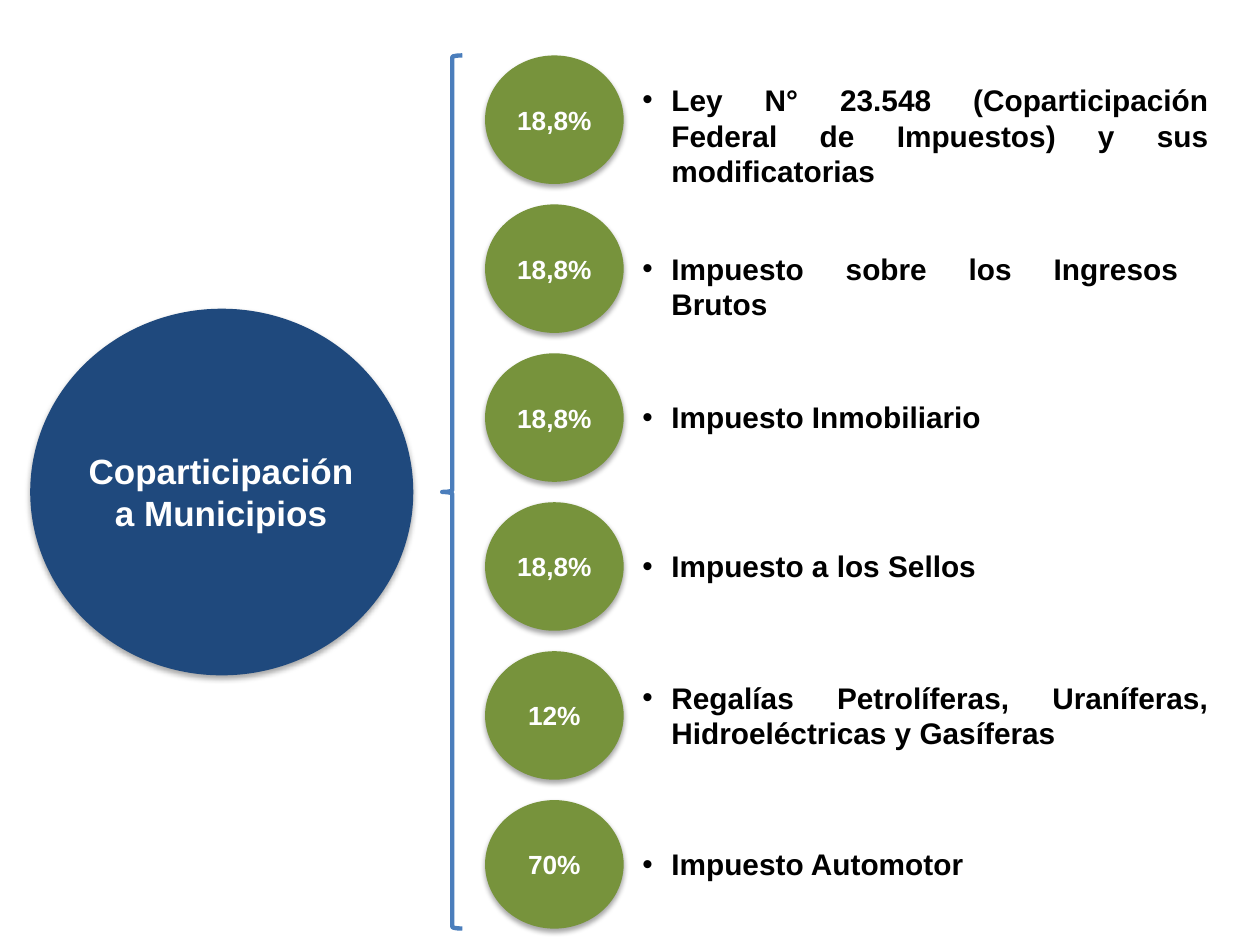
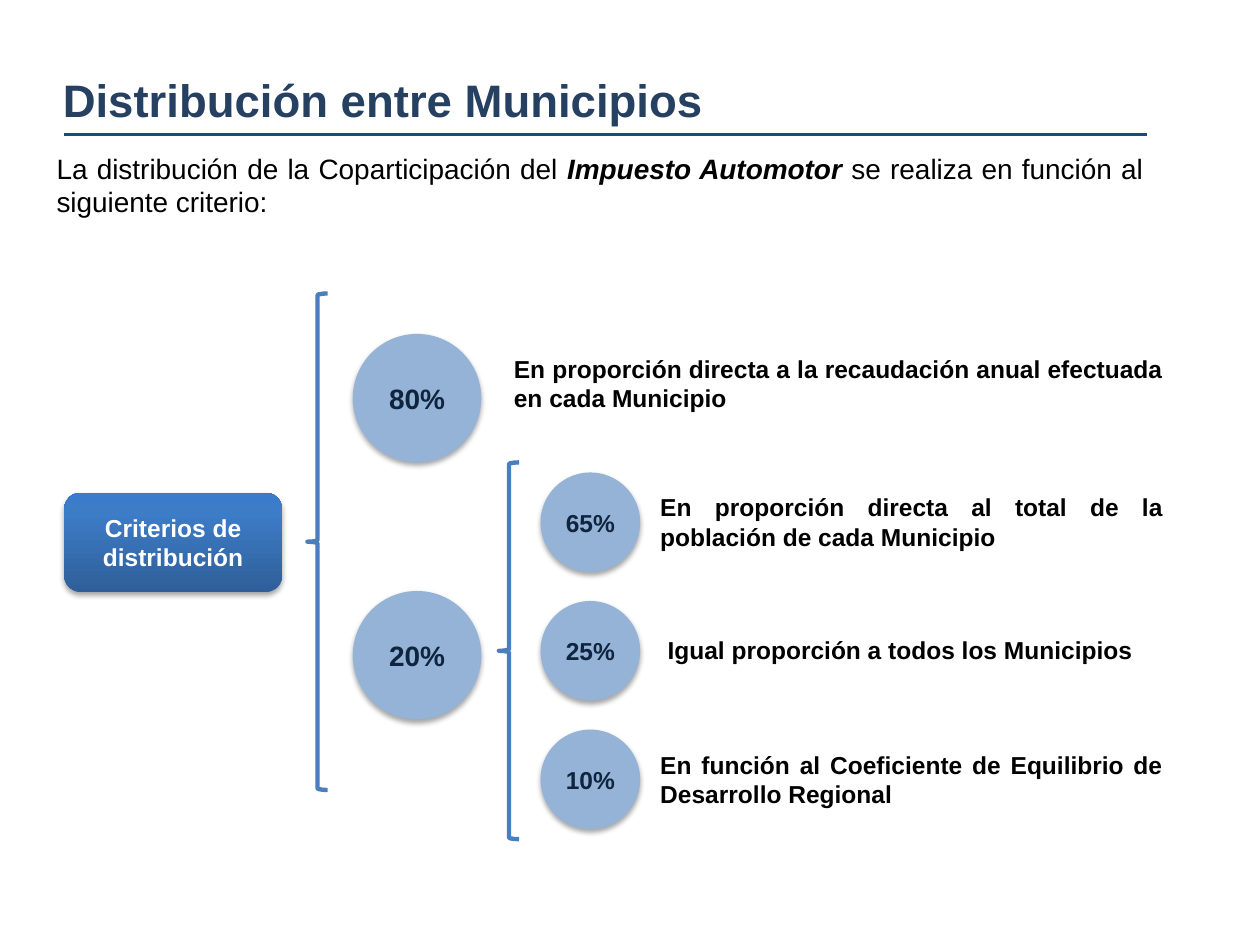
from lxml import etree
from pptx import Presentation
from pptx.dml.color import RGBColor
from pptx.enum import shapes, text
from pptx.oxml import ns
from pptx.util import Inches, Pt

FONT = "Arial"
BLACK = RGBColor(0x00, 0x00, 0x00)
WHITE = RGBColor(0xFF, 0xFF, 0xFF)
NAVY = RGBColor(0x1F, 0x49, 0x7D)
TITLE_BLUE = RGBColor(0x25, 0x40, 0x61)
INK = RGBColor(0x0F, 0x24, 0x3E)
BRACE_BLUE = RGBColor(0x4B, 0x7E, 0xBC)
GREEN = RGBColor(0x77, 0x93, 0x3C)
SKY = RGBColor(0x95, 0xB3, 0xD7)
BUTTON_STOPS = [(0, "2F5F99"), (80, "3D7CC7"), (100, "3A7CCB")]

NARROW = (0.04, 0.05, 0.04, 0.05)
NORMAL = (0.1, 0.05, 0.1, 0.05)
TIGHT_LEFT = (0.04, 0.05, 0.1, 0.05)

SHARES_TITLE = "Coparticipación a Municipios"
# share, tax, label width, label height
SHARES = [
    ("18,8%", "Ley N° 23.548 (Coparticipación Federal de Impuestos) y sus modificatorias", 4.69, 0.7),
    ("18,8%", "Impuesto sobre los Ingresos Brutos", 4.45, 0.39),
    ("18,8%", "Impuesto Inmobiliario", 4.45, 0.39),
    ("18,8%", "Impuesto a los Sellos", 4.45, 0.39),
    ("12%", "Regalías Petrolíferas, Uraníferas, Hidroeléctricas y Gasíferas", 4.69, 0.67),
    ("70%", "Impuesto Automotor", 2.82, 0.39),
]

TITLE = "Distribución entre Municipios"
INTRO = [
    ("La distribución de la Coparticipación del ", False),
    ("Impuesto Automotor ", True),
    ("se realiza en función al siguiente criterio:", False),
]
CRITERIA_TITLE = "Criterios de distribución"
DIRECT_SHARE = "En proporción directa a la recaudación anual efectuada en cada Municipio"
MAIN_SHARES = [("80%", 2.65), ("20%", 4.69)]
# share, criterion, label height, label insets
SUB_SHARES = [
    ("65%", "En proporción directa al total de la población de cada Municipio", 0.57, TIGHT_LEFT),
    ("25%", "Igual proporción a todos los Municipios", 0.35, NORMAL),
    ("10%", "En función al Coeficiente de Equilibrio de Desarrollo Regional", 0.57, TIGHT_LEFT),
]


def fill_text(box, content, size, color, align, insets=NORMAL, bold=True, bullet=False):
    """Write one paragraph; content is a string or (wording, emphasised) pairs."""
    frame = box.text_frame
    frame.word_wrap = True
    (frame.margin_left, frame.margin_top,
     frame.margin_right, frame.margin_bottom) = map(Inches, insets)
    para = frame.paragraphs[0]
    para.alignment = align
    if bullet:
        properties = para._p.get_or_add_pPr()
        properties.set("marL", str(Inches(0.23)))
        properties.set("indent", str(-Inches(0.23)))
        etree.SubElement(properties, ns.qn("a:buFont"), typeface=FONT)
        etree.SubElement(properties, ns.qn("a:buChar"), char="•")
    para.font.name = FONT
    para.font.size = Pt(size)
    para.font.bold = bold
    para.font.color.rgb = color
    if isinstance(content, str):
        content = [(content, False)]
    for wording, emphasised in content:
        span = para.add_run()
        span.text = wording
        if emphasised:
            span.font.bold = span.font.italic = True


def add_label(page, place, content, size, color=BLACK,
              align=text.PP_ALIGN.JUSTIFY, **options):
    box = page.shapes.add_textbox(*map(Inches, place))
    fill_text(box, content, size, color, align, **options)
    box.text_frame.auto_size = text.MSO_AUTO_SIZE.SHAPE_TO_FIT_TEXT


def add_soft_shadow(shape):
    shape.shadow.inherit = False
    effects = shape._element.spPr.find(ns.qn("a:effectLst"))
    shadow = etree.SubElement(effects, ns.qn("a:outerShdw"), blurRad=str(Pt(3.1)),
                              dist=str(Pt(1.8)), dir="5400000", rotWithShape="0")
    color = etree.SubElement(shadow, ns.qn("a:srgbClr"), val="000000")
    etree.SubElement(color, ns.qn("a:alpha"), val="35000")


def fill_gradient(shape, stops):
    """Fill from bottom to top with (percent, hex colour) stops."""
    shape.fill.gradient()
    shape.fill.gradient_angle = 90
    stop_list = shape._element.spPr.find(".//" + ns.qn("a:gsLst"))
    for old_stop in list(stop_list):
        stop_list.remove(old_stop)
    for percent, color in stops:
        stop = etree.SubElement(stop_list, ns.qn("a:gs"), pos=str(percent * 1000))
        etree.SubElement(stop, ns.qn("a:srgbClr"), val=color)


def add_node(page, kind, place, fill, content, size, color, insets=NORMAL):
    """Add a shadowed shape with centred text; fill is a colour or gradient stops."""
    node = page.shapes.add_shape(kind, *map(Inches, place))
    if isinstance(fill, list):
        fill_gradient(node, fill)
    else:
        node.fill.solid()
        node.fill.fore_color.rgb = fill
    node.line.fill.background()
    add_soft_shadow(node)
    fill_text(node, content, size, color, text.PP_ALIGN.CENTER, insets)
    node.text_frame.vertical_anchor = text.MSO_ANCHOR.MIDDLE


def add_brace(page, left, top, height):
    brace = page.shapes.add_shape(shapes.MSO_SHAPE.LEFT_BRACE,
                                  *map(Inches, (left, top, 0.16, height)))
    brace.fill.background()
    brace.line.color.rgb = BRACE_BLUE
    brace.line.width = Pt(2.5)
    brace.shadow.inherit = False


def add_rule(page, left, right, top):
    rule = page.shapes.add_connector(shapes.MSO_CONNECTOR.STRAIGHT,
                                     *map(Inches, (left, top, right, top)))
    rule.line.color.rgb = NAVY
    rule.line.width = Pt(1.5)
    etree.SubElement(rule._element.spPr, ns.qn("a:effectLst"))


def build_shares(page):
    oval = shapes.MSO_SHAPE.OVAL
    first_top, last_top, height = 0.44, 6.35, 1.02
    pitch = (last_top - first_top) / (len(SHARES) - 1)
    add_brace(page, 3.51, first_top, last_top + height - first_top)
    for row, (share, tax, label_width, label_height) in enumerate(SHARES):
        top = first_top + row * pitch
        label_top = top + (height - label_height) / 2
        add_label(page, (5, label_top, label_width, label_height), tax, 17, bullet=True)
        add_node(page, oval, (3.85, top, 1.1, height), GREEN, share, 15, WHITE, NARROW)
    add_node(page, oval, (0.24, 2.45, 3.04, 2.91), NAVY, SHARES_TITLE, 20, WHITE,
             (0, 0.04, 0.01, 0.05))


def build_criteria(page):
    oval = shapes.MSO_SHAPE.OVAL
    add_rule(page, 0.51, 9.1, 1.07)
    add_label(page, (0.4, 0.52, 8.82, 0.54), TITLE, 26, TITLE_BLUE, text.PP_ALIGN.LEFT)
    add_label(page, (0.35, 1.15, 8.82, 0.64), INTRO, 16, bold=False)

    for share, top in MAIN_SHARES:
        add_node(page, oval, (2.8, top, 1.02, 1.02), SKY, share, 16, INK)
    add_label(page, (3.98, 2.76, 5.35, 0.57), DIRECT_SHARE, 14)

    size, pitch = 0.79, 1.02
    for row, (share, criterion, label_height, insets) in enumerate(SUB_SHARES):
        top = 3.75 + row * pitch
        label_top = top + (size - label_height) / 2
        add_node(page, oval, (4.29, top, size, size), SKY, share, 14, INK, NARROW)
        add_label(page, (5.2, label_top, 4.13, label_height), criterion, 14, insets=insets)

    add_node(page, shapes.MSO_SHAPE.ROUNDED_RECTANGLE, (0.51, 3.91, 1.73, 0.79),
             BUTTON_STOPS, CRITERIA_TITLE, 14, WHITE)
    add_brace(page, 2.44, 2.33, 3.94)
    add_brace(page, 3.96, 3.67, 2.99)


def main():
    deck = Presentation()
    deck.slide_width, deck.slide_height = Inches(10), Inches(7.5)
    for build in (build_shares, build_criteria):
        build(deck.slides.add_slide(deck.slide_layouts[6]))
    deck.save("out.pptx")


if __name__ == "__main__":
    main()
